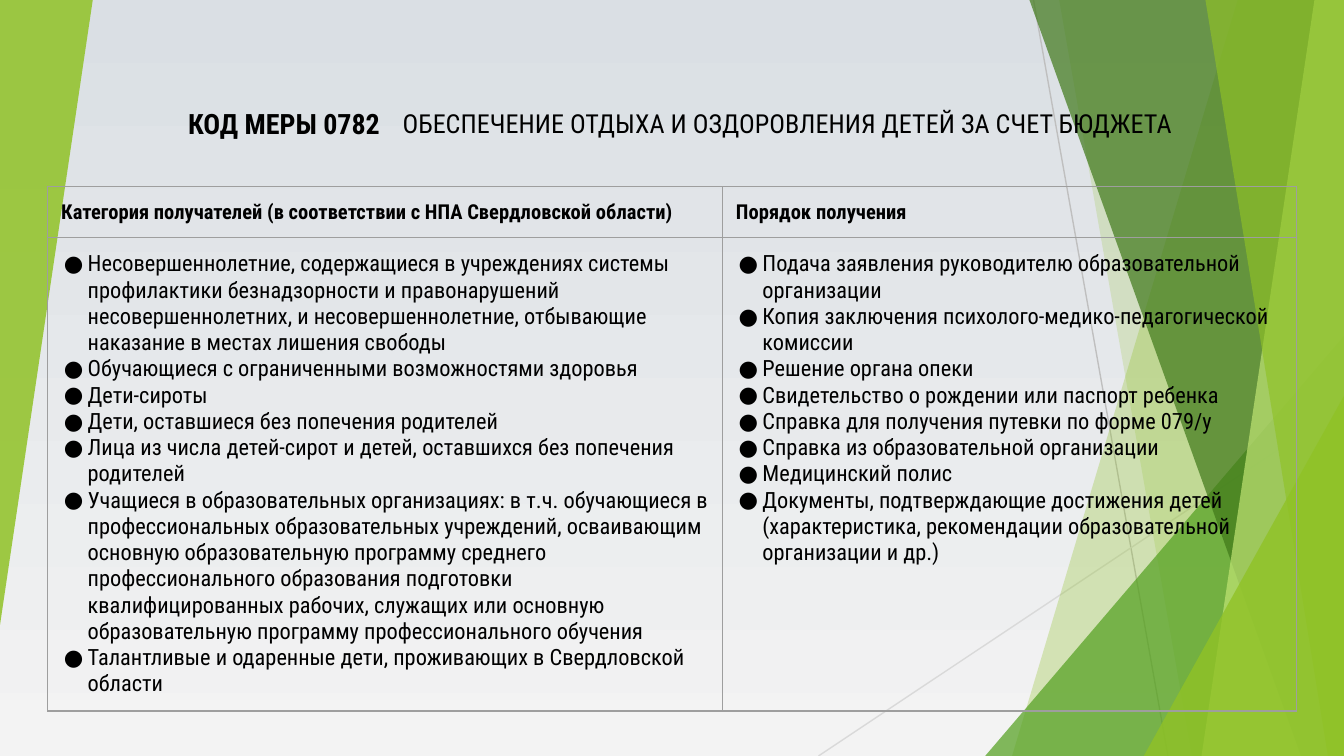
from lxml import etree
from pptx import Presentation
from pptx.dml.color import RGBColor
from pptx.enum.shapes import MSO_CONNECTOR, MSO_SHAPE
from pptx.enum.text import MSO_ANCHOR, PP_ALIGN
from pptx.oxml.ns import qn
from pptx.util import Pt

LINE, TRIANGLE = MSO_CONNECTOR.STRAIGHT, MSO_SHAPE.ISOSCELES_TRIANGLE
MIDDLE, LEFT, RIGHT = MSO_ANCHOR.MIDDLE, PP_ALIGN.LEFT, PP_ALIGN.RIGHT
WIDTH, HEIGHT = 720, 405
FONT = "Roboto Condensed"
BLACK, GREY, GREEN = "000000", "9E9E9E", "90C226"

HEADERS = [
    "Категория получателей (в соответствии с НПА Свердловской области)",
    "Порядок получения",
]
RECIPIENTS = [
    "Несовершеннолетние, содержащиеся в учреждениях системы профилактики "
    "безнадзорности и правонарушений несовершеннолетних, и несовершеннолетние, "
    "отбывающие наказание в местах лишения свободы",
    "Обучающиеся с ограниченными возможностями здоровья",
    "Дети-сироты",
    "Дети, оставшиеся без попечения родителей",
    "Лица из числа детей-сирот и детей, оставшихся без попечения родителей",
    "Учащиеся в образовательных организациях: в т.ч. обучающиеся в "
    "профессиональных образовательных учреждений, осваивающим основную "
    "образовательную программу среднего профессионального образования подготовки "
    "квалифицированных рабочих, служащих или основную образовательную программу "
    "профессионального обучения",
    "Талантливые и одаренные дети, проживающих в Свердловской области",
]
PROCEDURE = [
    "Подача заявления руководителю образовательной организации",
    "Копия заключения психолого-медико-педагогической комиссии",
    "Решение органа опеки",
    "Свидетельство о рождении или паспорт ребенка",
    "Справка для получения путевки по форме 079/у",
    "Справка из образовательной организации",
    "Медицинский полис",
    "Документы, подтверждающие достижения детей (характеристика, рекомендации "
    "образовательной организации и др.)",
]


def rgb(color):
    return RGBColor.from_string(color)


def add_color(parent, color):
    etree.SubElement(parent, qn("a:srgbClr"), val=color)


def paint(sp, color, opacity):
    """Fill a shape with a colour at an opacity in percent, without an outline."""
    sp.shadow.inherit = False
    sp.line.fill.background()
    sp.fill.solid()
    sp.fill.fore_color.rgb = rgb(color)
    clr = sp.fill._xPr.find(".//" + qn("a:srgbClr"))
    etree.SubElement(clr, qn("a:alpha"), val=str(opacity * 1000))


def add_ray(s, x1, y1, x2, y2, color):
    ray = s.shapes.add_connector(LINE, Pt(x1), Pt(y1), Pt(x2), Pt(y2))
    ray.line.color.rgb = rgb(color)
    ray.line.width = Pt(0.75)
    etree.SubElement(ray._element.spPr, qn("a:effectLst"))


def add_facet(s, top_x, bottom_x, color, opacity):
    """Draw a full-height facet from a slanted left edge to the slide's right edge."""
    outline = s.shapes.build_freeform(Pt(top_x), 0)
    outline.add_line_segments(
        [(Pt(x), Pt(y)) for x, y in ((WIDTH, 0), (WIDTH, HEIGHT), (bottom_x, HEIGHT))]
    )
    paint(outline.convert_to_shape(), color, opacity)


def add_triangle(s, x, y, w, h, color, opacity, rotation=0):
    sp = s.shapes.add_shape(TRIANGLE, Pt(x), Pt(y), Pt(w), Pt(h))
    sp.adjustments[0] = 1
    sp.rotation = rotation
    paint(sp, color, opacity)


def add_backdrop(s):
    fill = s.background.fill
    fill.gradient()
    fill.gradient_angle = 270
    for stop, color in zip(fill.gradient_stops, ("DADFE4", "F3F3F3")):
        stop.color.rgb = rgb(color)
    add_ray(s, 553.7, 0, 625.7, HEIGHT, "BFBFBF")
    add_ray(s, WIDTH, 217.4, 438.5, HEIGHT, "D9D9D9")
    add_facet(s, 663.1, 542.2, GREEN, 30)
    add_facet(s, 567.4, 638.6, GREEN, 20)
    add_triangle(s, 527.8, 180, 192.2, 225, "54A021", 72)
    add_facet(s, 551.5, 697, "3F7819", 70)
    add_facet(s, 704.2, 643.7, "C0E474", 70)
    add_facet(s, 645.8, 711.4, GREEN, 65)
    add_triangle(s, 612.7, 212, 107.3, 193, GREEN, 80)
    add_triangle(s, 0, 0, 49.7, 334.8, GREEN, 85, rotation=180)


def set_margins(frame, side, top):
    frame.margin_left = frame.margin_right = Pt(side)
    frame.margin_top = frame.margin_bottom = Pt(top)


def style(p, size, bold=False):
    for r in p.runs:
        r.font.name, r.font.size, r.font.bold = FONT, Pt(size), bold
        r.font.color.rgb = rgb(BLACK)


def add_label(s, x, y, w, h, text, size, bold, align, margins):
    tf = s.shapes.add_textbox(Pt(x), Pt(y), Pt(w), Pt(h)).text_frame
    tf.word_wrap = True
    tf.vertical_anchor = MIDDLE
    set_margins(tf, *margins)
    p = tf.paragraphs[0]
    p.text, p.alignment = text, align
    style(p, size, bold)


def add_heading(s, x, y, w, h):
    code_w = 152
    add_label(s, x, y, code_w, h, "КОД МЕРЫ 0782", 15, True, RIGHT, (7.2, 7.2))
    add_label(s, x + code_w, y, w - code_w, h,
              "ОБЕСПЕЧЕНИЕ ОТДЫХА И ОЗДОРОВЛЕНИЯ ДЕТЕЙ ЗА СЧЕТ БЮДЖЕТА",
              14, False, LEFT, (5, 3))


def add_bullet(p):
    pPr = p._p.get_or_add_pPr()
    pPr.set("marL", str(Pt(14.17)))
    pPr.set("indent", str(Pt(-12.7)))
    add_color(etree.SubElement(pPr, qn("a:buClr")), BLACK)
    etree.SubElement(pPr, qn("a:buFont"), typeface=FONT)
    etree.SubElement(pPr, qn("a:buChar"), char="●")


def format_cell(cell):
    """Give the cell grey borders, no fill and even margins."""
    tcPr = cell._tc.get_or_add_tcPr()
    for side in ("a:lnL", "a:lnR", "a:lnT", "a:lnB"):
        ln = etree.SubElement(tcPr, qn(side), w=str(Pt(0.75)))
        add_color(etree.SubElement(ln, qn("a:solidFill")), GREY)
    cell.fill.background()
    set_margins(cell, 7.2, 7.2)


def add_measure_table(s, x, y, w, h):
    header_h, first_w = 26.8, 361.5
    table = s.shapes.add_table(2, 2, Pt(x), Pt(y), Pt(w), Pt(h)).table
    table.first_row = table.horz_banding = False
    for col, width in zip(table.columns, (first_w, w - first_w)):
        col.width = Pt(width)
    for row, height in zip(table.rows, (header_h, h - header_h)):
        row.height = Pt(height)
    for i, (header, items) in enumerate(zip(HEADERS, (RECIPIENTS, PROCEDURE))):
        head, body = table.cell(0, i), table.cell(1, i)
        format_cell(head)
        format_cell(body)
        head.text_frame.text = header
        style(head.text_frame.paragraphs[0], 11, True)
        body.text_frame.text = "\n".join(items)
        for p in body.text_frame.paragraphs:
            add_bullet(p)
            style(p, 12)


def main():
    prs = Presentation()
    prs.slide_width, prs.slide_height = Pt(WIDTH), Pt(HEIGHT)
    s = prs.slides.add_slide(prs.slide_layouts[6])
    add_backdrop(s)
    add_measure_table(s, 25.6, 100, 669, 280.4)
    add_heading(s, 58.7, 38.2, 605.3, 55.4)
    prs.save("out.pptx")


if __name__ == "__main__":
    main()
